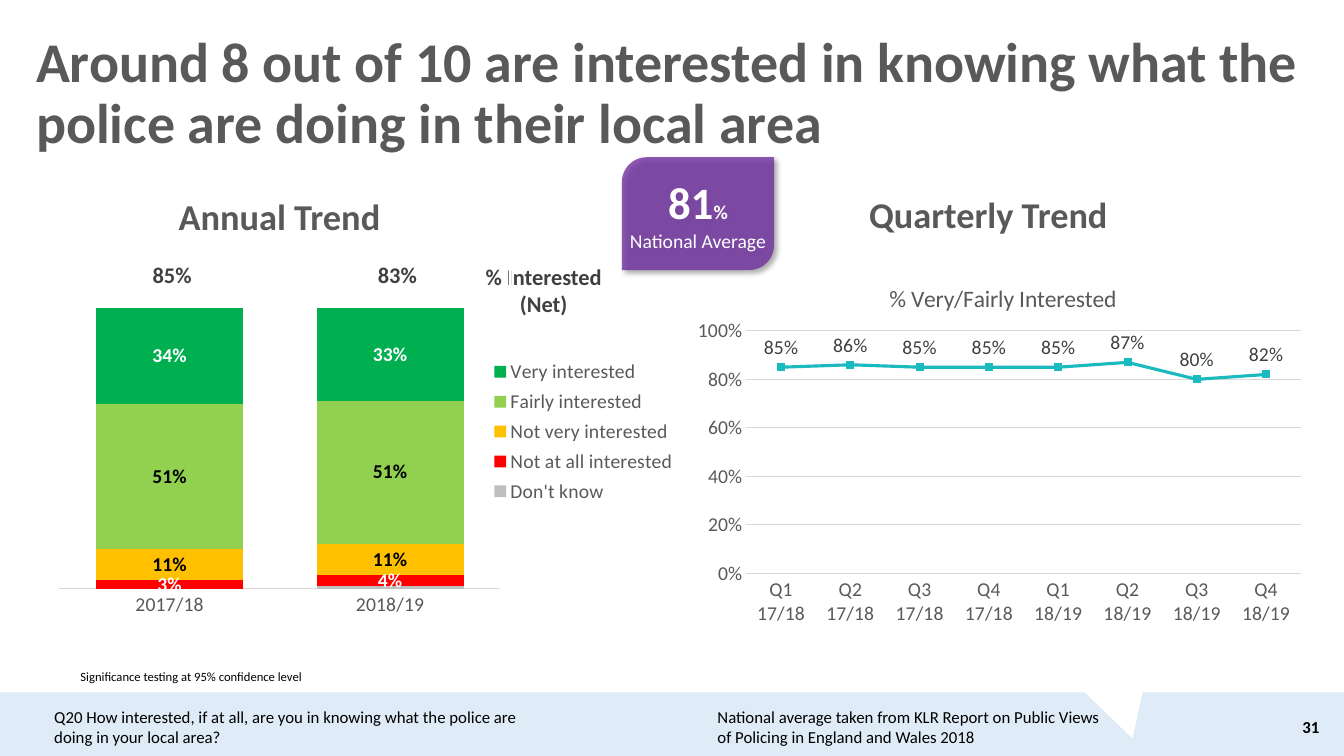
"""Build the slide on public interest in local policing."""
from dataclasses import dataclass
from typing import Any, Optional

from lxml import etree
from pptx import Presentation
from pptx import util as u
from pptx.chart import data as cd
from pptx.dml.color import RGBColor
from pptx.enum import chart as ch, shapes, text
from pptx.oxml import ns

FACE = "Calibri"
BLACK = RGBColor(0x00, 0x00, 0x00)
WHITE = RGBColor(0xFF, 0xFF, 0xFF)
GREY = RGBColor(0x59, 0x59, 0x59)
DARK = RGBColor(0x40, 0x40, 0x40)
RULE = RGBColor(0xD9, 0xD9, 0xD9)
PALE = RGBColor(0xDF, 0xEB, 0xF7)
PURPLE = RGBColor(0x70, 0x30, 0xA0)
TEAL = RGBColor(0x1B, 0xBA, 0xBF)
SILVER = RGBColor(0xBF, 0xBF, 0xBF)
RED = RGBColor(0xFF, 0x00, 0x00)
AMBER = RGBColor(0xFF, 0xC0, 0x00)
LIME = RGBColor(0x92, 0xD0, 0x50)
GREEN = RGBColor(0x00, 0xB0, 0x50)

LEFT, MID, RIGHT = text.PP_ALIGN.LEFT, text.PP_ALIGN.CENTER, text.PP_ALIGN.RIGHT
TOP, HALF = text.MSO_ANCHOR.TOP, text.MSO_ANCHOR.MIDDLE
Box = tuple[float, float, float, float]


@dataclass
class Note:
    box: Box
    words: str
    size: float = 12
    tint: RGBColor = BLACK
    bold: bool = False
    align: Any = LEFT
    anchor: Any = TOP
    space: float = 1
    wrap: bool = True


@dataclass
class Layer:
    name: str
    vals: tuple[float, ...]
    fill: RGBColor
    label: Optional[RGBColor] = None


NOTES = [
    Note((908.6, 504.7, 41, 28.8), "31", bold=True, align=RIGHT, anchor=HALF),
    Note((31.7, 501.1, 371.5, 36),
         "Q20 How interested, if at all, are you in knowing what the police are "
         "doing in your local area?"),
    Note((18.7, 12.2, 931, 110.9),
         "Around 8 out of 10 are interested in knowing what the police are doing "
         "in their local area", 40, GREY, True, anchor=HALF, space=0.9),
    Note((50.4, 474.5, 427, 18), "Significance testing at 95% confidence level", 9),
    Note((485.3, 139, 441.4, 33.1), "Quarterly Trend", 25.9, GREY, True, MID, HALF, 0.8),
    Note((59, 128.2, 281.5, 55.4), "Annual Trend", 26, GREY, True, MID, HALF, 0.9),
    Note((505.4, 501.1, 289.4, 36),
         "National average taken from KLR Report on Public Views of Policing in "
         "England and Wales 2018"),
    Note((339.1, 184.3, 98.6, 46.1), "% Interested\n(Net)", 16, DARK, True, MID, wrap=False),
]

LAYERS = [
    Layer("Don't know", (0, 0.01), SILVER),
    Layer("Not at all interested", (0.03, 0.04), RED, WHITE),
    Layer("Not very interested", (0.11, 0.11), AMBER, BLACK),
    Layer("Fairly interested", (0.51, 0.51), LIME, BLACK),
    Layer("Very interested", (0.34, 0.33), GREEN, WHITE),
]
TREND = Layer("Series 1", (0.85, 0.86, 0.85, 0.85, 0.85, 0.87, 0.8, 0.82), TEAL, DARK)
TERMS = [f"Q{q}\n{year}" for year in ("17/18", "18/19") for q in range(1, 5)]


def pts(box: Box) -> list[u.Pt]:
    return [u.Pt(v) for v in box]


def style(font: Any, size: float, tint: RGBColor, bold: bool = False) -> None:
    font.name, font.size, font.bold = FACE, u.Pt(size), bold
    font.color.rgb = tint


def write(slide: Any, note: Note) -> None:
    frame = slide.shapes.add_textbox(*pts(note.box)).text_frame
    frame.word_wrap, frame.vertical_anchor = note.wrap, note.anchor
    frame.text = note.words
    for para in frame.paragraphs:
        para.alignment, para.line_spacing = note.align, note.space
        for run in para.runs:
            style(run.font, note.size, note.tint, note.bold)


def draw(slide: Any, kind: Any, box: Box, fill: RGBColor) -> Any:
    shape = slide.shapes.add_shape(kind, *pts(box))
    shape.shadow.inherit = False
    shape.fill.solid()
    shape.fill.fore_color.rgb = fill
    shape.line.fill.background()
    return shape


def badge(slide: Any) -> None:
    shape = draw(slide, shapes.MSO_SHAPE.ROUND_2_DIAG_RECTANGLE,
                 (444.2, 112.3, 108.7, 80.6), PURPLE)
    shape.adjustments[0], shape.adjustments[1] = 0.22, 0
    props = shape.fill._xPr
    tone = props.find(ns.qn("a:solidFill"))[0]
    etree.SubElement(tone, ns.qn("a:alpha"), val="80000")
    glow = etree.SubElement(props.find(ns.qn("a:effectLst")), ns.qn("a:outerShdw"),
                            blurRad=str(u.Pt(4)), dist=str(u.Pt(3)), dir="2700000",
                            algn="tl", rotWithShape="0")
    shade = etree.SubElement(glow, ns.qn("a:srgbClr"), val=str(BLACK))
    etree.SubElement(shade, ns.qn("a:alpha"), val="40000")
    frame = shape.text_frame
    frame.margin_left = frame.margin_right = frame.margin_top = frame.margin_bottom = 0
    frame.word_wrap, frame.vertical_anchor = True, HALF
    frame.text = "81\nNational Average"
    first, last = frame.paragraphs
    first.add_run().text = "%"
    first.alignment = last.alignment = MID
    for run, size, bold in zip(first.runs + last.runs, (32, 14, 14), (True, True, False)):
        style(run.font, size, WHITE, bold)


def place(part: Any, index: int, **frac: float) -> None:
    for old in part.findall(ns.qn("c:layout")):
        part.remove(old)
    outer = etree.Element(ns.qn("c:layout"))
    part.insert(index, outer)
    inner = etree.SubElement(outer, ns.qn("c:manualLayout"))
    if index == 0:
        etree.SubElement(inner, ns.qn("c:layoutTarget"), val="inner")
    for key in "xy":
        etree.SubElement(inner, ns.qn(f"c:{key}Mode"), val="edge")
    for key, val in frac.items():
        etree.SubElement(inner, ns.qn(f"c:{key}"), val=str(val))


def graph(slide: Any, kind: Any, box: Box, cats: list[str], layers: list[Layer], spot: Any) -> Any:
    data = cd.CategoryChartData(number_format="0%")
    data.categories = cats
    for layer in layers:
        data.add_series(layer.name, layer.vals)
    chart = slide.shapes.add_chart(kind, *pts(box), data).chart
    style(chart.font, 14, BLACK)
    chart.has_title = chart.has_legend = False
    chart.plots[0].vary_by_categories = False
    for axis in (chart.category_axis, chart.value_axis):
        axis.major_tick_mark = axis.minor_tick_mark = ch.XL_TICK_MARK.NONE
        style(axis.tick_labels.font, 14, GREY)
    line = chart.category_axis.format.line
    line.color.rgb, line.width = RULE, u.Pt(0.75)
    for layer, series in zip(layers, chart.plots[0].series):
        if layer.label is not None:
            tags = series.data_labels
            tags.show_value, tags.position = True, spot
            tags.number_format, tags.number_format_is_linked = "0%", False
            style(tags.font, 14, layer.label, len(layers) > 1)
    return chart


def annual(slide: Any) -> None:
    chart = graph(slide, ch.XL_CHART_TYPE.COLUMN_STACKED_100, (28.8, 175, 456.5, 299.5),
                  ["2017/18", "2018/19"], LAYERS, ch.XL_LABEL_POSITION.CENTER)
    plot = chart.plots[0]
    plot.gap_width, plot.overlap = 50, 100
    for layer, series in zip(LAYERS, plot.series):
        series.format.fill.solid()
        series.format.fill.fore_color.rgb = layer.fill
    chart.value_axis.visible = chart.value_axis.has_major_gridlines = False
    chart.has_legend = True
    chart.legend.include_in_layout = False
    style(chart.legend.font, 14, GREY)
    place(chart.legend._element, 1, x=0.7, y=0.26, w=0.3, h=0.37)
    place(chart._chartSpace.chart.plotArea, 0, x=0.03, y=0.15, w=0.69, h=0.67)


def quarter(slide: Any) -> None:
    chart = graph(slide, ch.XL_CHART_TYPE.LINE_MARKERS, (488.2, 182.2, 450, 270.7),
                  TERMS, [TREND], ch.XL_LABEL_POSITION.ABOVE)
    axis = chart.value_axis
    axis.minimum_scale, axis.maximum_scale, axis.major_unit = 0, 1, 0.2
    axis.tick_labels.number_format, axis.tick_labels.number_format_is_linked = "0%", False
    axis.format.line.fill.background()
    grid = axis.major_gridlines.format.line
    grid.color.rgb, grid.width = RULE, u.Pt(0.75)
    series = chart.plots[0].series[0]
    series.smooth = False
    series.format.line.color.rgb, series.format.line.width = TEAL, u.Pt(2.25)
    mark = series.marker
    mark.style, mark.size = ch.XL_MARKER_STYLE.SQUARE, 5
    mark.format.fill.solid()
    mark.format.fill.fore_color.rgb = mark.format.line.color.rgb = TEAL
    head = chart.chart_title
    head.text_frame.text = "% Very/Fairly Interested"
    style(head.text_frame.paragraphs[0].runs[0].font, 16.8, GREY)
    place(head._element, 1, x=0.32, y=0.06)
    place(chart._chartSpace.chart.plotArea, 0, x=0.1, y=0.2, w=0.88, h=0.64)


def totals(slide: Any) -> None:
    table = slide.shapes.add_table(1, 2, *pts((42.5, 182.2, 321.8, 29.5))).table
    for cell, words in zip(table.iter_cells(), ("85%", "83%")):
        cell.fill.background()
        cell.vertical_anchor = HALF
        cell.text_frame.text = words
        para = cell.text_frame.paragraphs[0]
        para.alignment = MID
        style(para.runs[0].font, 16, DARK, True)


def main() -> None:
    deck = Presentation()
    deck.slide_width, deck.slide_height = u.Pt(960), u.Pt(540)
    slide = deck.slides.add_slide(deck.slide_layouts[6])
    draw(slide, shapes.MSO_SHAPE.RECTANGLE, (0, 494.6, 960, 45.4), PALE)
    notch = draw(slide, shapes.MSO_SHAPE.ISOSCELES_TRIANGLE, (774, 478.8, 55.4, 49.7), WHITE)
    notch.rotation = 163.1
    quarter(slide)
    annual(slide)
    for note in NOTES:
        write(slide, note)
    badge(slide)
    totals(slide)
    deck.save("out.pptx")


if __name__ == "__main__":
    main()
